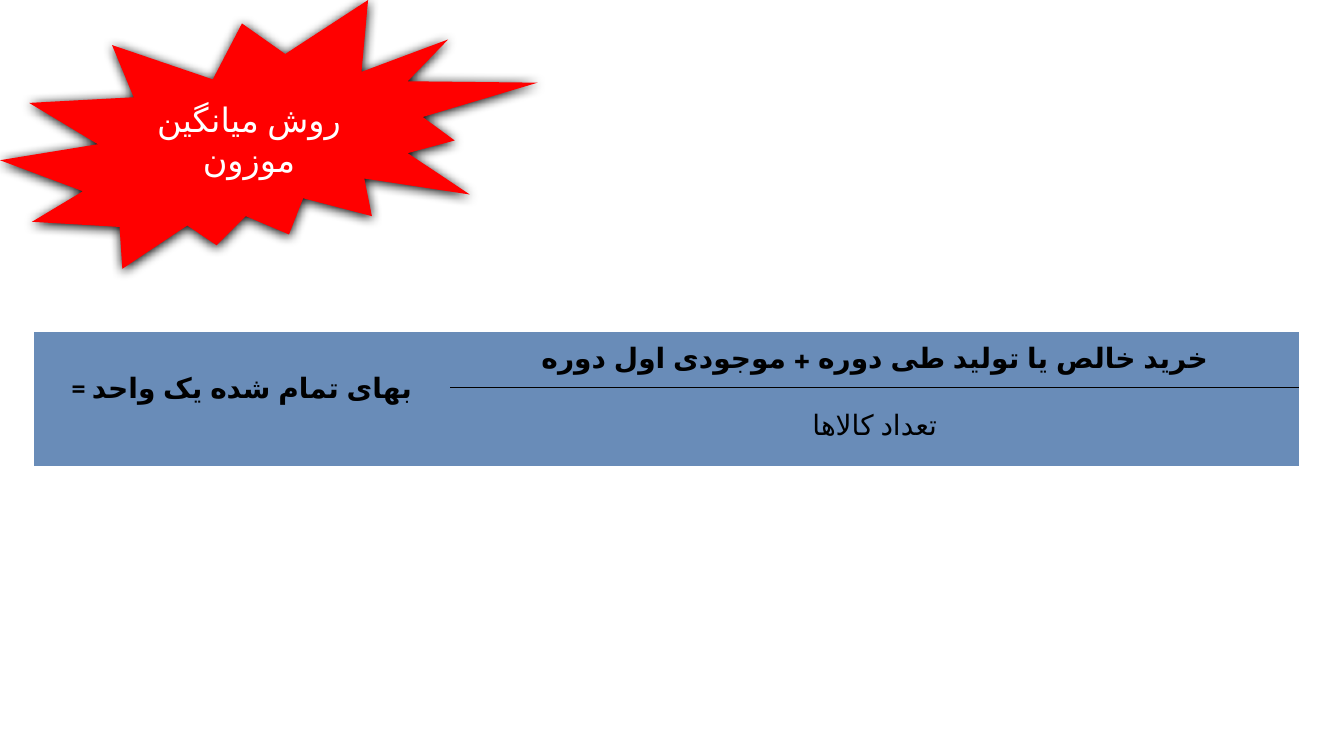
import pptx
import pptx.util
import pptx.dml.color
import pptx.enum.lang
import pptx.enum.shapes
import pptx.enum.text
import pptx.oxml
import pptx.oxml.ns

Pt = pptx.util.Pt
RED = pptx.dml.color.RGBColor(0xFF, 0x00, 0x00)
BLUE = pptx.dml.color.RGBColor(0x69, 0x8C, 0xB8)
BLACK = pptx.dml.color.RGBColor(0x00, 0x00, 0x00)
WHITE = pptx.dml.color.RGBColor(0xFF, 0xFF, 0xFF)
FONT = "Calibri"
NO_STYLE = "{2D5ABB26-0587-4C30-8999-92F81FD0307C}"
qn = pptx.oxml.ns.qn


def write(frame, text, size=20, color=BLACK, bold=False, rtl=False):
    """Put one centred Persian paragraph into a text frame."""
    para = frame.paragraphs[0]
    para.alignment = pptx.enum.text.PP_ALIGN.CENTER
    if rtl:
        para._p.get_or_add_pPr().set("rtl", "1")
    span = para.add_run()
    span.text = text
    span.font.size = Pt(size)
    span.font.bold = bold
    span.font.color.rgb = color
    span.font.name = FONT
    span.font.language_id = pptx.enum.lang.MSO_LANGUAGE_ID.FARSI


def add_border(cell, side):
    """Draw a thin black line on one side of a cell."""
    border = pptx.oxml.parse_xml(
        f'<a:{side} {pptx.oxml.ns.nsdecls("a")} w="{Pt(1)}">'
        f'<a:solidFill><a:srgbClr val="{BLACK}"/></a:solidFill></a:{side}>')
    cell._tc.get_or_add_tcPr().insert(0, border)


deck = pptx.Presentation()
deck.slide_width, deck.slide_height = Pt(960), Pt(540)
page = deck.slides.add_slide(deck.slide_layouts[6])

# Red burst with the method's name
burst = page.shapes.add_shape(
    pptx.enum.shapes.MSO_SHAPE.EXPLOSION2, Pt(0), Pt(0), Pt(384), Pt(192))
burst.fill.solid()
burst.fill.fore_color.rgb = RED
burst.line.fill.background()
burst.shadow.inherit = False
effects = burst._element.spPr.find(qn("a:effectLst"))
effects.append(pptx.oxml.parse_xml(
    f'<a:outerShdw {pptx.oxml.ns.nsdecls("a")} blurRad="{Pt(8.5)}" '
    f'dist="{Pt(1)}" dir="5400000" algn="ctr" rotWithShape="0">'
    f'<a:srgbClr val="{BLACK}"/></a:outerShdw>'))
burst.text_frame.word_wrap = True
burst.text_frame.vertical_anchor = pptx.enum.text.MSO_ANCHOR.MIDDLE
write(burst.text_frame, "روش میانگین موزون", size=24, color=WHITE)

# Formula table
widths, heights = (297.5, 606.5), (39.5, 56)
table_frame = page.shapes.add_table(
    2, 2, Pt(24), Pt(237.5), Pt(sum(widths)), Pt(sum(heights)))
table = table_frame.table
table.first_row = table.horz_banding = False
table._tbl.tblPr.find(qn("a:tableStyleId")).text = NO_STYLE
for column, width in zip(table.columns, widths):
    column.width = Pt(width)
for row, height in zip(table.rows, heights):
    row.height = Pt(height)
for cell in table.iter_cells():
    cell.fill.solid()
    cell.fill.fore_color.rgb = BLUE
    cell.margin_left = cell.margin_right = Pt(9.5)
    cell.margin_top = cell.margin_bottom = Pt(3.6)
    cell.vertical_anchor = pptx.enum.text.MSO_ANCHOR.MIDDLE

unit_cost, numerator, denominator = table.cell(0, 0), table.cell(0, 1), table.cell(1, 1)
unit_cost.merge(table.cell(1, 0))
unit_cost.vertical_anchor = pptx.enum.text.MSO_ANCHOR.TOP
unit_cost.margin_top = Pt(28)
write(unit_cost.text_frame, "= بهای تمام شده یک واحد", bold=True)
write(numerator.text_frame, "خرید خالص یا تولید طی دوره + موجودی اول دوره", bold=True)
write(denominator.text_frame, "تعداد کالاها", rtl=True)

# Fraction bar
add_border(numerator, "lnB")
add_border(denominator, "lnT")

deck.save("out.pptx")
